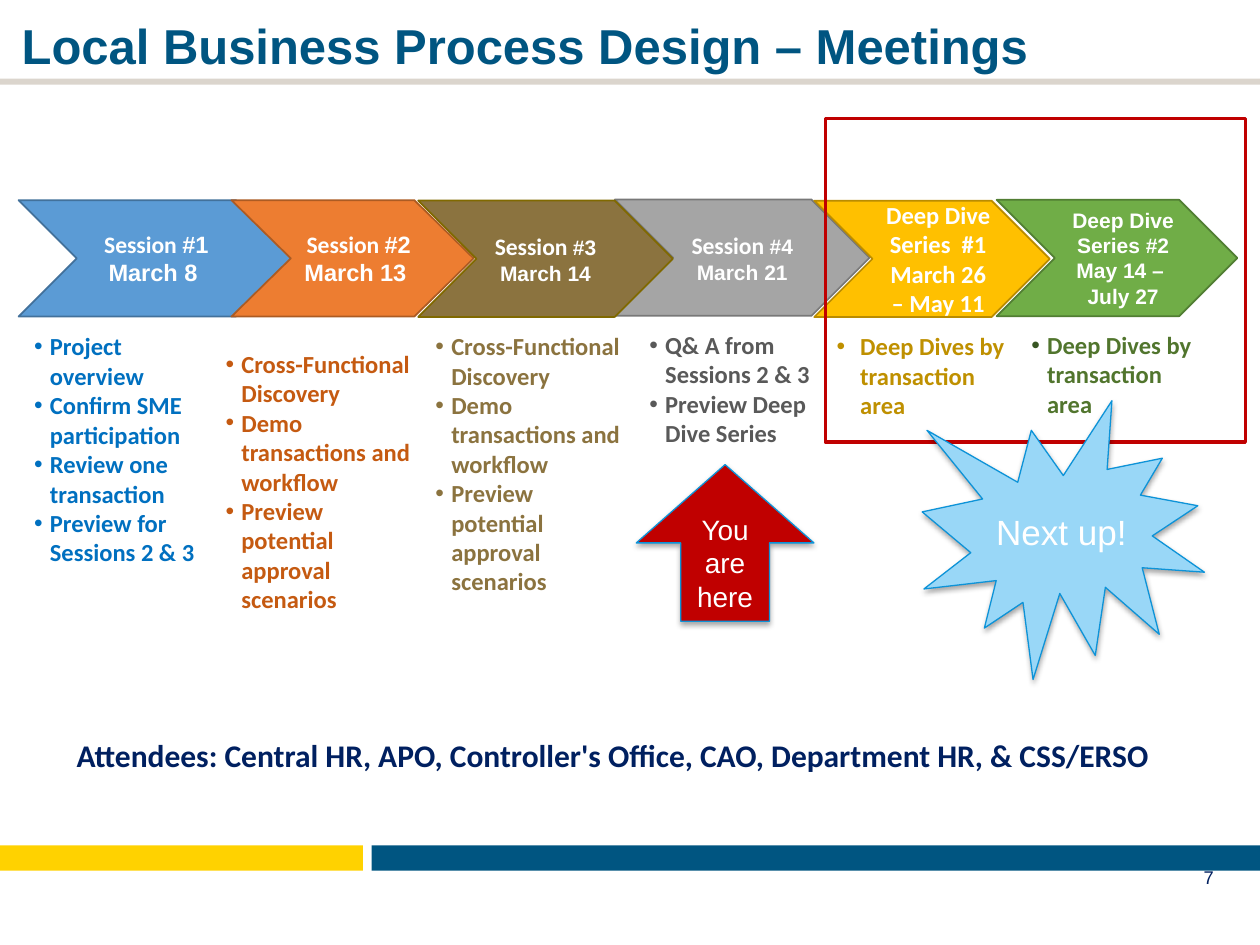
import copy

import pptx
import pptx.dml.color
import pptx.enum.shapes
import pptx.enum.text
import pptx.oxml
import pptx.oxml.ns
import pptx.util

Pt = pptx.util.Pt
RGB = pptx.dml.color.RGBColor
SHAPE = pptx.enum.shapes.MSO_SHAPE
ALIGN = pptx.enum.text.PP_ALIGN
ANCHOR = pptx.enum.text.MSO_ANCHOR
qn = pptx.oxml.ns.qn

WHITE = RGB(0xFF, 0xFF, 0xFF)
TEAL = RGB(0x00, 0x55, 0x81)
YELLOW = RGB(0xFF, 0xD2, 0x00)
STONE = RGB(0xDB, 0xD5, 0xCD)
NAVY = RGB(0x00, 0x20, 0x60)
RED = RGB(0xC0, 0x00, 0x00)
SKY = RGB(0x99, 0xD7, 0xF7)
SKY_EDGE = RGB(0x0D, 0x93, 0xD8)
BLUE, BLUE_EDGE, BLUE_TEXT = RGB(0x5B, 0x9B, 0xD5), RGB(0x42, 0x71, 0x9B), RGB(0x00, 0x70, 0xC0)
ORANGE, ORANGE_EDGE, ORANGE_TEXT = RGB(0xED, 0x7D, 0x31), RGB(0xAC, 0x5B, 0x23), RGB(0xC5, 0x5A, 0x11)
GRAY, GRAY_EDGE, GRAY_TEXT = RGB(0xA5, 0xA5, 0xA5), RGB(0x78, 0x78, 0x78), RGB(0x59, 0x59, 0x59)
AMBER, AMBER_EDGE, AMBER_TEXT = RGB(0xFF, 0xC0, 0x00), RGB(0xBA, 0x8C, 0x00), RGB(0xBF, 0x90, 0x00)
GREEN, GREEN_EDGE, GREEN_TEXT = RGB(0x70, 0xAD, 0x47), RGB(0x51, 0x7E, 0x33), RGB(0x51, 0x75, 0x2D)
GREEN_BULLET = RGB(0x38, 0x56, 0x23)
BROWN, BROWN_EDGE = RGB(0x8B, 0x73, 0x3F), RGB(0x80, 0x69, 0x00)

# left, top, width, notch, right inset, fill, edge, runs of (text, size, font)
CHEVRON_HEIGHT = 66.5
CHEVRONS = [
    (10.6, 114.4, 157.4, 0.5, 7.2, BLUE, BLUE_EDGE,
     [("Session ", 13.5, "Calibri"), ("#1\nMarch 8 ", 13.5, "Arial")]),
    (132.3, 114.4, 138.4, 0.51, 0, ORANGE, ORANGE_EDGE,
     [("Session ", 13.5, "Calibri"), ("#2\nMarch 13 ", 13.5, "Arial")]),
    (351.4, 114, 145.5, 0.5, 7.2, GRAY, GRAY_EDGE,
     [("Session ", 13.5, "Calibri"), ("#4\nMarch 21", 12, "Arial")]),
    (465.3, 114.7, 134.6, 0.5, 0, AMBER, AMBER_EDGE,
     [("Deep Dive Series  #1\nMarch 26 – May 11", 14, "Calibri")]),
    (569.5, 114.2, 137.5, 0.5, 0, GREEN, GREEN_EDGE,
     [("Deep Dive Series #2\nMay 14 – \nJuly 27", 12, "Arial")]),
    (239, 114.6, 145.5, 0.5, 7.2, BROWN, BROWN_EDGE,
     [("Session ", 13.5, "Calibri"), ("#3\nMarch 14", 12, "Arial")]),
]

# left, top, width, height, indent, text colour, bullet colour, items
TOPICS = [
    (16.6, 189.4, 105.8, 205, 9, BLUE_TEXT, BLUE_TEXT,
     ["Project overview", "Confirm SME participation",
      "Review one transaction", "Preview for Sessions 2 & 3"]),
    (126, 199.4, 111.6, 191.5, 9, ORANGE_TEXT, ORANGE_TEXT,
     ["Cross-Functional Discovery", "Demo transactions and workflow",
      "Preview potential approval scenarios"]),
    (586.5, 188.6, 105.8, 227.5, 9, GREEN_TEXT, GREEN_BULLET,
     ["Deep Dives by transaction area"]),
    (475.2, 189.4, 105.8, 155.5, 13.5, AMBER_TEXT, AMBER_TEXT,
     ["Deep Dives by transaction area"]),
    (246, 189.2, 112.3, 193, 9, BROWN, BROWN,
     ["Cross-Functional Discovery", "Demo transactions and workflow",
      "Preview potential approval scenarios"]),
    (368.2, 188.6, 109.4, 146.2, 9, GRAY_TEXT, GRAY_TEXT,
     ["Q& A from Sessions 2 & 3", "Preview Deep Dive Series"]),
]

# left, top, width, height, fill
BARS = [(212.4, 483.1, 507.6, 14.4, TEAL),
        (0, 483.1, 207.4, 14.4, YELLOW),
        (0, 44.9, 720, 3.5, STONE)]

# left, top, width, height, text, size, font, colour, bold, alignment, anchor
LABELS = [
    (5.3, 5.3, 710, 42.5, "Local Business Process Design – Meetings", 28, "Arial", TEAL, True,
     ALIGN.LEFT, ANCHOR.TOP),
    (538.6, 486.7, 162, 28.8, "7", 10.5, "Arial", NAVY, False, ALIGN.RIGHT, ANCHOR.MIDDLE),
    (36.7, 416.9, 664.6, 28.8,
     "Attendees: Central HR, APO, Controller's Office, CAO, Department HR, & CSS/ERSO",
     18, "Calibri", NAVY, True, ALIGN.LEFT, ANCHOR.TOP),
]

# preset, left, top, width, height, fill, text, size
CALLOUTS = [
    (SHAPE.UP_ARROW, 363.6, 265.5, 101.5, 89.5, RED, "You are here", 16),
    (SHAPE.EXPLOSION1, 527, 229, 161.3, 159.3, SKY, "Next up!", 20),
]


def add_shape(s, preset, box, fill=None, edge=None, weight=1):
    sp = s.shapes.add_shape(preset, *map(Pt, box))
    sp.shadow.inherit = False
    if fill is None:
        sp.fill.background()
    else:
        sp.fill.solid()
        sp.fill.fore_color.rgb = fill
    if edge is None:
        sp.line.fill.background()
    else:
        sp.line.color.rgb = edge
        sp.line.width = Pt(weight)
    return sp


def set_frame(sp, left=7.2, top=3.6, right=7.2, bottom=3.6, anchor=ANCHOR.MIDDLE):
    tf = sp.text_frame
    tf.word_wrap = True
    tf.margin_left, tf.margin_top = Pt(left), Pt(top)
    tf.margin_right, tf.margin_bottom = Pt(right), Pt(bottom)
    tf.vertical_anchor = anchor
    return tf


def add_runs(p, text, size, font, color, bold):
    """Append text to p, turning each newline into a line break of the same size."""
    for i, line in enumerate(text.split("\n")):
        if i:
            p.add_line_break()
            line_break = p._p.findall(qn("a:br"))[-1]
        r = p.add_run()
        r.text = line
        r.font.size, r.font.name, r.font.bold = Pt(size), font, bold
        r.font.color.rgb = color
        if i:
            line_break.append(copy.deepcopy(r._r.rPr))


def add_bullet(p, indent, color):
    pPr = p._p.get_or_add_pPr()
    pPr.set("marL", str(Pt(indent)))
    pPr.set("indent", str(-Pt(indent)))
    ns = pptx.oxml.ns.nsdecls("a")
    for xml in (f'<a:buClr {ns}><a:srgbClr val="{color}"/></a:buClr>',
                f'<a:buFont {ns} typeface="Arial"/>',
                f'<a:buChar {ns} char="•"/>'):
        pPr.append(pptx.oxml.parse_xml(xml))


def add_drop_shadow(sp):
    effects = sp._element.spPr.find(qn("a:effectLst"))
    effects.append(pptx.oxml.parse_xml(
        f'<a:outerShdw {pptx.oxml.ns.nsdecls("a")} blurRad="{Pt(3.1)}" dist="{Pt(1.8)}" '
        'dir="5400000" rotWithShape="0"><a:srgbClr val="000000">'
        '<a:alpha val="35000"/></a:srgbClr></a:outerShdw>'))


def main():
    prs = pptx.Presentation()
    prs.slide_width, prs.slide_height = Pt(720), Pt(540)
    s = prs.slides.add_slide(prs.slide_layouts[6])

    for *box, fill in BARS:
        add_shape(s, SHAPE.RECTANGLE, box, fill)

    for *box, text, size, font, color, bold, align, anchor in LABELS:
        tf = set_frame(s.shapes.add_textbox(*map(Pt, box)), anchor=anchor)
        p = tf.paragraphs[0]
        p.alignment = align
        add_runs(p, text, size, font, color, bold)

    for left, top, width, notch, inset, fill, edge, runs in CHEVRONS:
        sp = add_shape(s, SHAPE.CHEVRON, (left, top, width, CHEVRON_HEIGHT), fill, edge)
        sp.adjustments[0] = notch
        p = set_frame(sp, right=inset).paragraphs[0]
        p.alignment = ALIGN.CENTER
        for text, size, font in runs:
            add_runs(p, text, size, font, WHITE, True)

    for *box, indent, color, bullet_color, items in TOPICS:
        tf = set_frame(s.shapes.add_textbox(*map(Pt, box)), 2.9, 0, 2.9, 0, ANCHOR.TOP)
        for i, item in enumerate(items):
            p = tf.add_paragraph() if i else tf.paragraphs[0]
            add_bullet(p, indent, bullet_color)
            add_runs(p, item, 14, "Calibri", color, True)

    add_shape(s, SHAPE.RECTANGLE, (471.6, 67.8, 240, 184.8), edge=RED, weight=2)

    for preset, *box, fill, text, size in CALLOUTS:
        sp = add_shape(s, preset, box, fill, SKY_EDGE, 0.75)
        add_drop_shadow(sp)
        p = set_frame(sp).paragraphs[0]
        p.alignment = ALIGN.CENTER
        add_runs(p, text, size, "Arial", WHITE, False)

    prs.save("out.pptx")


if __name__ == "__main__":
    main()
